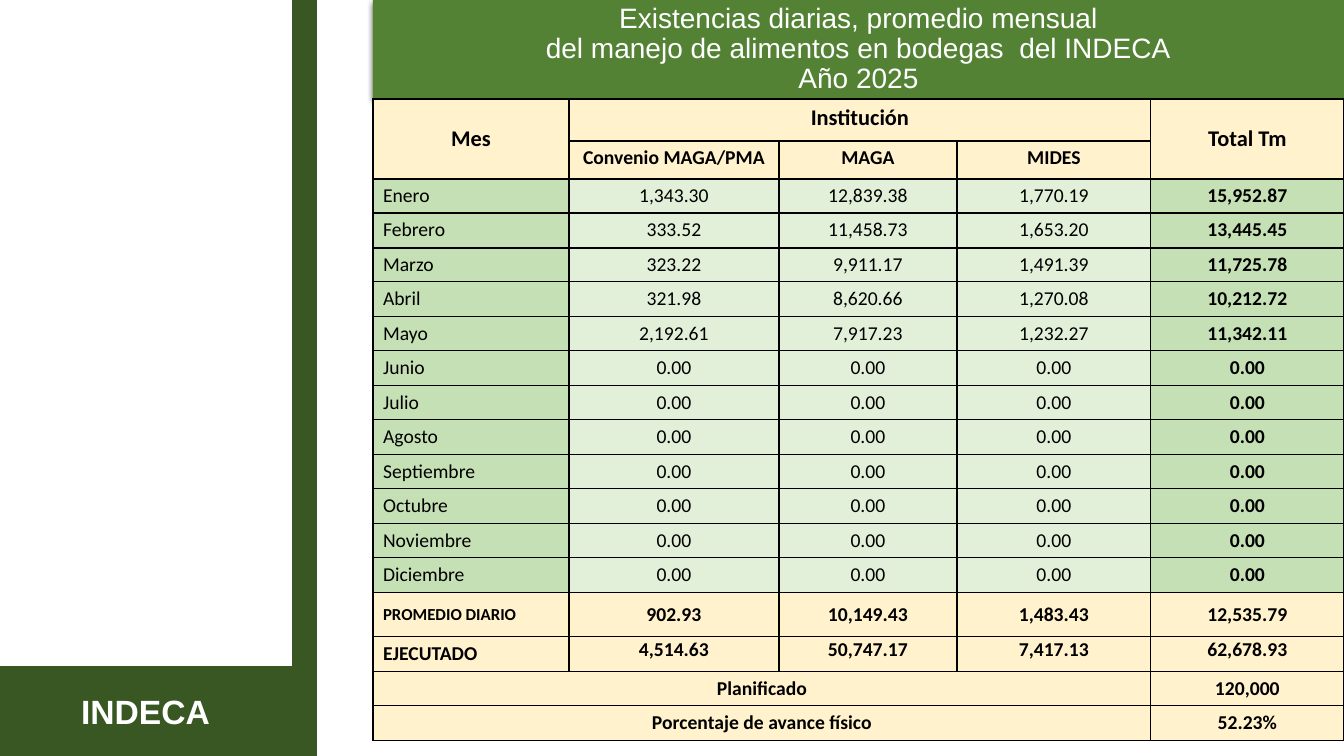
from lxml import etree
from pptx import Presentation
from pptx.dml.color import RGBColor
from pptx.enum import shapes, text
from pptx.oxml import ns
from pptx.util import Pt

# Content
TITLE = ["Existencias diarias, promedio mensual",
         "del manejo de alimentos en bodegas  del INDECA",
         "Año 2025"]
AGENCY = "INDECA"
HEADER = [["Mes", "Institución", "", "", "Total Tm"],
          ["", "Convenio MAGA/PMA", "MAGA", "MIDES", ""]]
MONTHS = [
    ["Enero", "1,343.30", "12,839.38", "1,770.19", "15,952.87"],
    ["Febrero", "333.52", "11,458.73", "1,653.20", "13,445.45"],
    ["Marzo", "323.22", "9,911.17", "1,491.39", "11,725.78"],
    ["Abril", "321.98", "8,620.66", "1,270.08", "10,212.72"],
    ["Mayo", "2,192.61", "7,917.23", "1,232.27", "11,342.11"],
]
PENDING = ["Junio", "Julio", "Agosto", "Septiembre", "Octubre", "Noviembre", "Diciembre"]
MONTHS += [[month] + ["0.00"] * 4 for month in PENDING]
SUMMARY = [
    ["PROMEDIO DIARIO", "902.93", "10,149.43", "1,483.43", "12,535.79"],
    ["EJECUTADO", "4,514.63", "50,747.17", "7,417.13", "62,678.93"],
    ["Planificado", "", "", "", "120,000"],
    ["Porcentaje de avance físico", "", "", "", "52.23%"],
]
ROWS = HEADER + MONTHS + SUMMARY
AVERAGE = len(HEADER) + len(MONTHS)
EXECUTED, PLANNED, PROGRESS = AVERAGE + 1, AVERAGE + 2, AVERAGE + 3
MERGES = [(0, 0, 1, 0), (0, 1, 0, 3), (0, 4, 1, 4),
          (PLANNED, 0, PLANNED, 3), (PROGRESS, 0, PROGRESS, 3)]

# Colours
DARK_GREEN = RGBColor(0x38, 0x57, 0x23)
TITLE_GREEN = RGBColor(0x54, 0x82, 0x35)
MID_GREEN = RGBColor(0xC5, 0xE0, 0xB4)
PALE_GREEN = RGBColor(0xE2, 0xF0, 0xD9)
CREAM = RGBColor(0xFF, 0xF2, 0xCC)
WHITE = RGBColor(0xFF, 0xFF, 0xFF)
BLACK = RGBColor(0, 0, 0)

# Layout in px
SLIDE_W, SLIDE_H = 1344, 756
TABLE_X, TABLE_Y = 373, 99
COLUMNS = [196, 210, 178, 194, 193]
HEIGHTS = [42, 38] + [34, 35] * 6 + [44, 35, 34, 35]
BANDS = [(0, 668, 293, 88, 3), (293, 0, 23, 756, 1)]


def px(n):
    return round(n * 914400 / 100.8)


def style(paragraph, size, color, font, bold=False, align=text.PP_ALIGN.CENTER):
    paragraph.alignment = align
    paragraph.font.size = Pt(size)
    paragraph.font.name = font
    paragraph.font.bold = bold
    paragraph.font.color.rgb = color


def add_borders(cell):
    props = cell._tc.get_or_add_tcPr()
    for i, side in enumerate(("lnL", "lnR", "lnT", "lnB")):
        line = etree.Element(ns.qn("a:" + side), w=str(Pt(1)))
        fill = etree.SubElement(line, ns.qn("a:solidFill"))
        etree.SubElement(fill, ns.qn("a:srgbClr"), val=str(BLACK))
        props.insert(i, line)


def add_title_shadow(title):
    effects = etree.SubElement(title._element.spPr, ns.qn("a:effectLst"))
    shadow = etree.SubElement(effects, ns.qn("a:outerShdw"), blurRad=str(Pt(4.5)),
                              dist=str(Pt(1.5)), dir="5400000", rotWithShape="0")
    color = etree.SubElement(shadow, ns.qn("a:srgbClr"), val=str(BLACK))
    etree.SubElement(color, ns.qn("a:alpha"), val="63000")


def fill_cell(cell, row, col, words):
    is_month = len(HEADER) <= row < AVERAGE
    is_label = col == 0 and len(HEADER) <= row < PLANNED
    cell.fill.solid()
    if is_month:
        cell.fill.fore_color.rgb = MID_GREEN if col in (0, 4) else PALE_GREEN
    else:
        cell.fill.fore_color.rgb = CREAM
    add_borders(cell)
    if not words:
        return
    if row == AVERAGE or (row == 0 and col != 1):
        cell.vertical_anchor = text.MSO_ANCHOR.MIDDLE
    if row == EXECUTED and col > 0:
        cell.margin_left = cell.margin_right = cell.margin_top = px(1)
        cell.margin_bottom = 0
    cell.text = words
    size = 16 if row == 0 else 12 if row == AVERAGE and col == 0 else 14
    style(cell.text_frame.paragraphs[0], size, BLACK, "Calibri",
          bold=not is_month or col == 4,
          align=text.PP_ALIGN.LEFT if is_label else text.PP_ALIGN.CENTER)


def main():
    prs = Presentation()
    prs.slide_width, prs.slide_height = px(SLIDE_W), px(SLIDE_H)
    slide = prs.slides.add_slide(prs.slide_layouts[5])

    # Side bands and agency name
    for x, y, w, h, weight in BANDS:
        band = slide.shapes.add_shape(shapes.MSO_SHAPE.RECTANGLE, px(x), px(y), px(w), px(h))
        band.shadow.inherit = False
        band.fill.solid()
        band.fill.fore_color.rgb = DARK_GREEN
        band.line.color.rgb = DARK_GREEN
        band.line.width = Pt(weight)
    agency = slide.shapes.add_textbox(px(10), px(686), px(271), px(50)).text_frame
    agency.word_wrap = True
    agency.text = AGENCY
    style(agency.paragraphs[0], 24, WHITE, "Arial", bold=True)

    # Title banner
    title = slide.shapes.title
    title.left, title.top = px(TABLE_X), 0
    title.width, title.height = px(SLIDE_W - TABLE_X), px(TABLE_Y)
    title.fill.solid()
    title.fill.fore_color.rgb = TITLE_GREEN
    add_title_shadow(title)
    title.text_frame.text = "\v".join(TITLE)
    title.text_frame.auto_size = text.MSO_AUTO_SIZE.NONE
    title.text_frame.vertical_anchor = text.MSO_ANCHOR.MIDDLE
    heading = title.text_frame.paragraphs[0]
    heading.line_spacing = 0.9
    style(heading, 20, WHITE, "Arial")

    # Stock table
    stock = slide.shapes.add_table(len(ROWS), len(COLUMNS), px(TABLE_X), px(TABLE_Y),
                                   px(sum(COLUMNS)), px(sum(HEIGHTS))).table
    stock.first_row = stock.horz_banding = False
    for column, width in zip(stock.columns, COLUMNS):
        column.width = px(width)
    for table_row, height in zip(stock.rows, HEIGHTS):
        table_row.height = px(height)
    for r, row in enumerate(ROWS):
        for c, words in enumerate(row):
            fill_cell(stock.cell(r, c), r, c, words)
    for top, left, bottom, right in MERGES:
        stock.cell(top, left).merge(stock.cell(bottom, right))

    prs.save("out.pptx")


if __name__ == "__main__":
    main()
